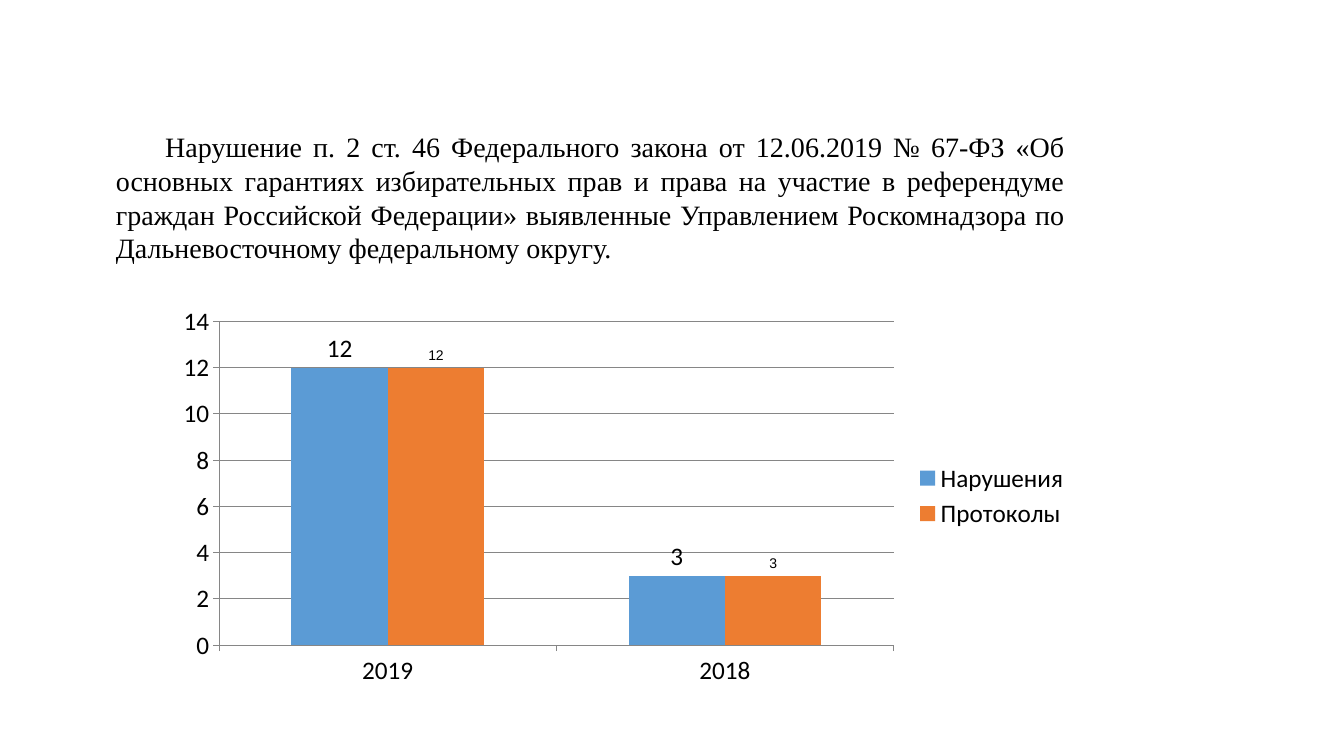
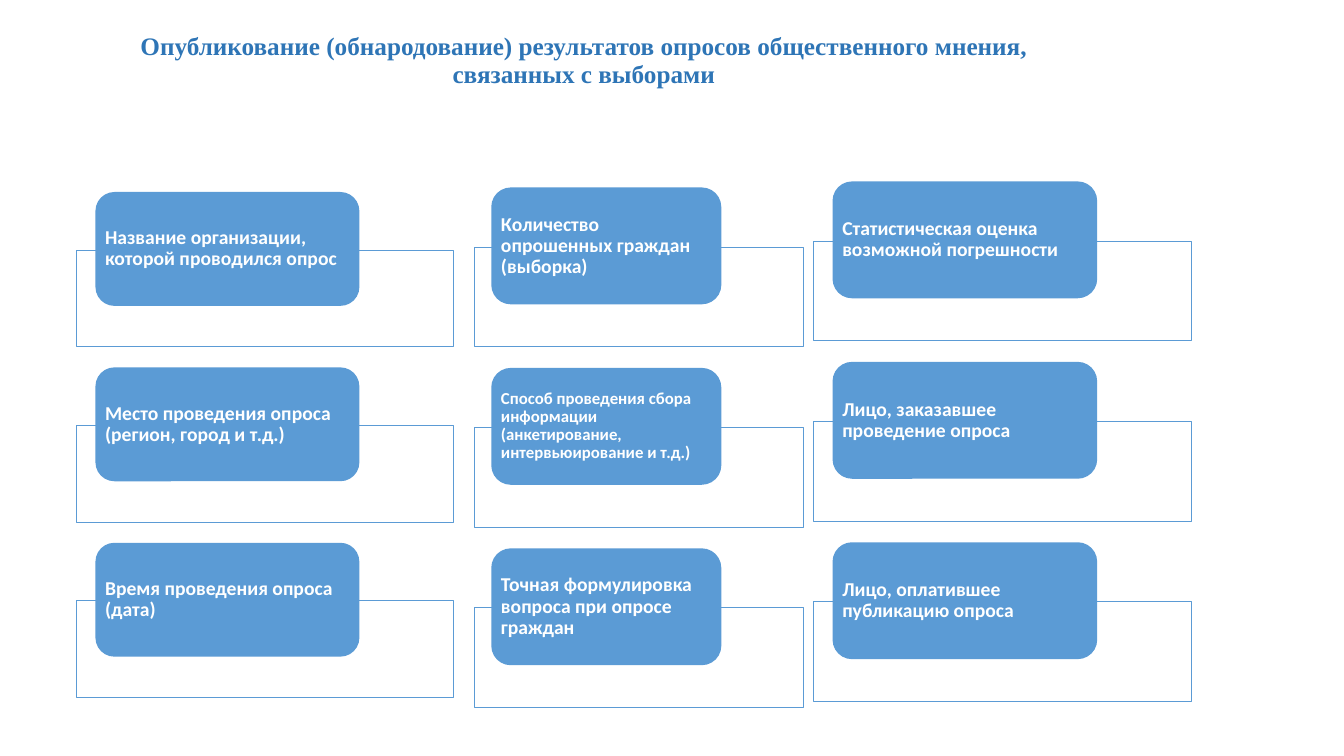
from lxml.etree import SubElement
from pptx import Presentation
from pptx.chart.data import CategoryChartData
from pptx.dml.color import RGBColor
from pptx.enum.chart import XL_CHART_TYPE, XL_LABEL_POSITION, XL_LEGEND_POSITION, XL_TICK_MARK
from pptx.enum.shapes import MSO_SHAPE
from pptx.enum.text import MSO_ANCHOR, PP_ALIGN
from pptx.oxml.ns import qn
from pptx.util import Pt

EMU_PER_PX = 9144
SERIF, SANS = "Times New Roman", "Calibri"
BLACK, WHITE, GRAY = "000000", "FFFFFF", "868686"
BLUE, ORANGE, TITLE_BLUE = "5B9BD5", "ED7D31", "2E75B6"

STATEMENT = (
    "Нарушение п. 2 ст. 46 Федерального закона от 12.06.2019 № 67-ФЗ "
    "«Об основных гарантиях избирательных прав и права на участие в референдуме "
    "граждан Российской Федерации» выявленные Управлением Роскомнадзора по "
    "Дальневосточному федеральному округу."
)
YEARS = ["2019", "2018"]
SERIES = [
    ("Нарушения", [12, 3], BLUE, SANS, 18),
    ("Протоколы", [12, 3], ORANGE, "Arial", 10),
]

TITLE = "Опубликование (обнародование) результатов опросов общественного мнения, связанных с выборами"
COLUMNS = [
    {"left": 76, "top": 248, "width": 374, "frame": 96, "tab": 113, "pitch": 174,
     "cards": [("Название организации, которой проводился опрос", 14),
               ("Место проведения опроса (регион, город и т.д.)", 14),
               ("Время проведения опроса (дата)", 14)]},
    {"left": 471, "top": 245, "width": 326, "frame": 99, "tab": 116, "pitch": 179,
     "cards": [("Количество опрошенных граждан (выборка)", 14),
               ("Способ проведения сбора информации (анкетирование, интервьюирование и т.д.)", 12),
               ("Точная формулировка вопроса при опросе граждан", 14)]},
    {"left": 807, "top": 239, "width": 375, "frame": 99, "tab": 116, "pitch": 179,
     "cards": [("Статистическая оценка возможной погрешности", 14),
               ("Лицо, заказавшее проведение опроса", 14),
               ("Лицо, оплатившее публикацию опроса", 14)]},
]


def px(length):
    return round(length * EMU_PER_PX)


def color(value):
    return RGBColor.from_string(value)


def style_font(font, name, size, ink, bold=False):
    font.name, font.size, font.bold = name, Pt(size), bold
    font.color.rgb = color(ink)


def write(shape, text, name, size, ink, align, bold=False, spacing=1.0, anchor=MSO_ANCHOR.TOP):
    frame = shape.text_frame
    frame.word_wrap = True
    frame.vertical_anchor = anchor
    para = frame.paragraphs[0]
    para.alignment, para.line_spacing = align, spacing
    span = para.add_run()
    span.text = text
    style_font(span.font, name, size, ink, bold)
    return para


def add_box(page, left, top, width, height):
    return page.shapes.add_textbox(px(left), px(top), px(width), px(height))


def add_panel(page, kind, left, top, width, height, fill):
    panel = page.shapes.add_shape(kind, px(left), px(top), px(width), px(height))
    panel.shadow.inherit = False
    panel.fill.solid()
    panel.fill.fore_color.rgb = color(fill)
    panel.line.color.rgb = color(BLUE)
    panel.line.width = Pt(0.5)
    return panel


def add_card(page, column, row, text, size):
    left, width, tab_height = column["left"], column["width"], column["tab"]
    top = column["top"] + row * column["pitch"]
    frame = add_panel(page, MSO_SHAPE.RECTANGLE, left, top, width, column["frame"], WHITE)
    fill = frame.fill.fore_color
    frame_color = frame.element.spPr.find(qn("a:solidFill"))[0]
    SubElement(frame_color, qn("a:alpha"), val="90000")
    tab = add_panel(page, MSO_SHAPE.ROUNDED_RECTANGLE, left + width * 0.05,
                    top - tab_height / 2 - 1, width * 0.7, tab_height, BLUE)
    tab.line.fill.background()
    body = tab.text_frame
    body.margin_left = body.margin_right = px(4)
    body.margin_top = body.margin_bottom = 0
    write(tab, text, SANS, size, WHITE, PP_ALIGN.LEFT, True, 0.9, MSO_ANCHOR.MIDDLE)


def add_violations_chart(page):
    data = CategoryChartData()
    data.categories = YEARS
    for name, values, *_ in SERIES:
        data.add_series(name, values)
    chart = page.shapes.add_chart(XL_CHART_TYPE.COLUMN_CLUSTERED, px(164), px(296),
                                  px(907), px(392), data).chart
    style_font(chart.font, SANS, 18, BLACK)
    chart.has_title = False
    chart.has_legend = True
    chart.legend.position = XL_LEGEND_POSITION.RIGHT
    chart.legend.include_in_layout = False

    values_axis = chart.value_axis
    values_axis.minimum_scale, values_axis.maximum_scale, values_axis.major_unit = 0, 14, 2
    values_axis.has_major_gridlines = True
    for axis in (chart.category_axis, values_axis):
        axis.major_tick_mark = XL_TICK_MARK.OUTSIDE
    for part in (chart.category_axis, values_axis, values_axis.major_gridlines):
        part.format.line.color.rgb = color(GRAY)
        part.format.line.width = Pt(0.75)

    plot = chart.plots[0]
    plot.gap_width, plot.overlap, plot.vary_by_categories = 150, 0, False
    for series, (_, _, fill, font, size) in zip(plot.series, SERIES):
        series.format.fill.solid()
        series.format.fill.fore_color.rgb = color(fill)
        labels = series.data_labels
        labels.show_value = True
        labels.position = XL_LABEL_POSITION.OUTSIDE_END
        style_font(labels.font, font, size, BLACK)


def build_violations(page):
    para = write(add_box(page, 105, 122, 961, 147), STATEMENT, SERIF, 20, BLACK,
                 PP_ALIGN.JUSTIFY, anchor=MSO_ANCHOR.MIDDLE)
    para._p.get_or_add_pPr().set("indent", str(px(49)))
    add_violations_chart(page)


def build_polls(page):
    write(add_box(page, 93, 29, 972, 99), TITLE, SERIF, 18, TITLE_BLUE,
          PP_ALIGN.CENTER, True, 0.9)
    for column in COLUMNS:
        for row, (text, size) in enumerate(column["cards"]):
            add_card(page, column, row, text, size)


def main():
    deck = Presentation()
    deck.slide_width, deck.slide_height = px(1333), px(750)
    for build in (build_violations, build_polls):
        build(deck.slides.add_slide(deck.slide_layouts[6]))
    deck.save("out.pptx")


if __name__ == "__main__":
    main()
